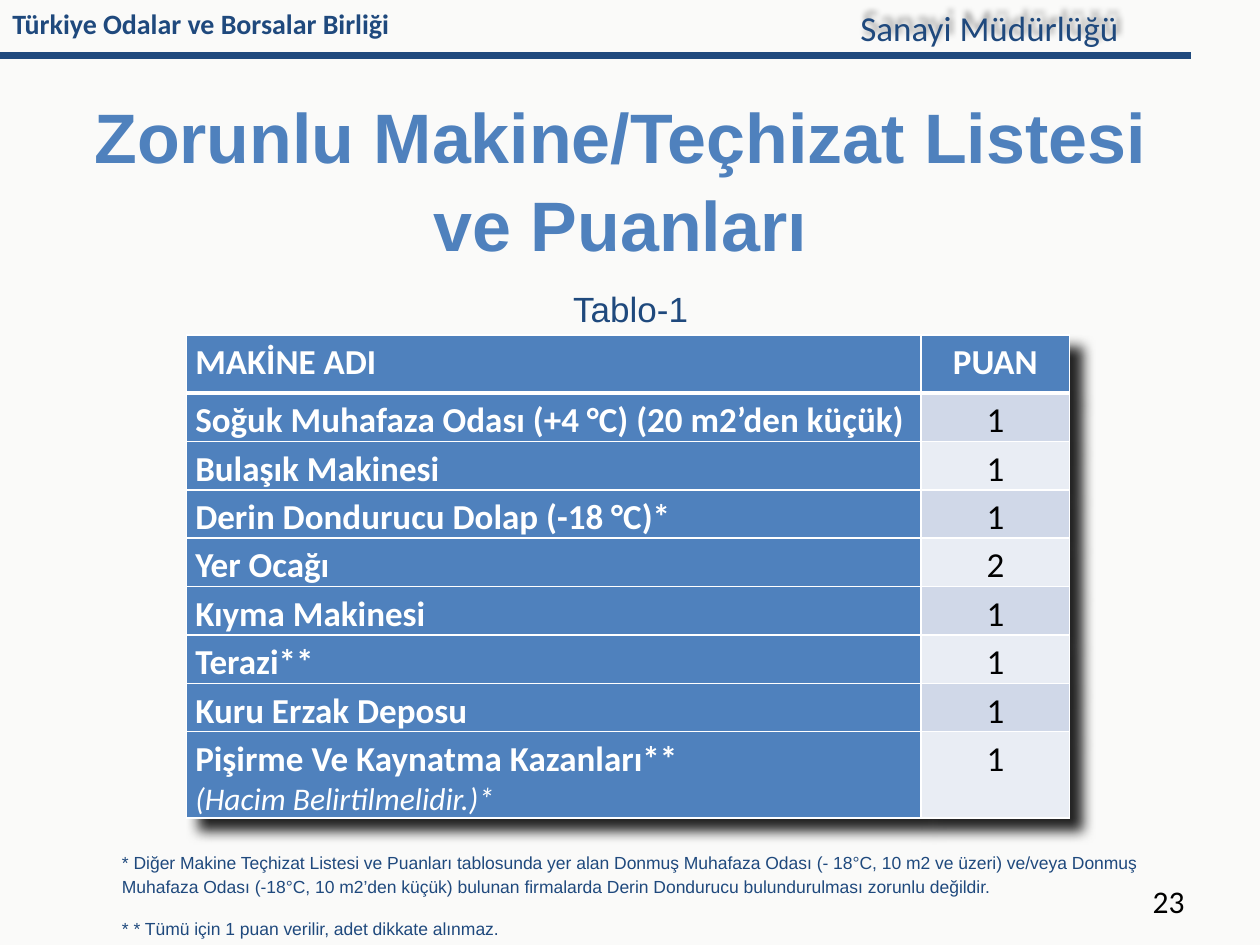
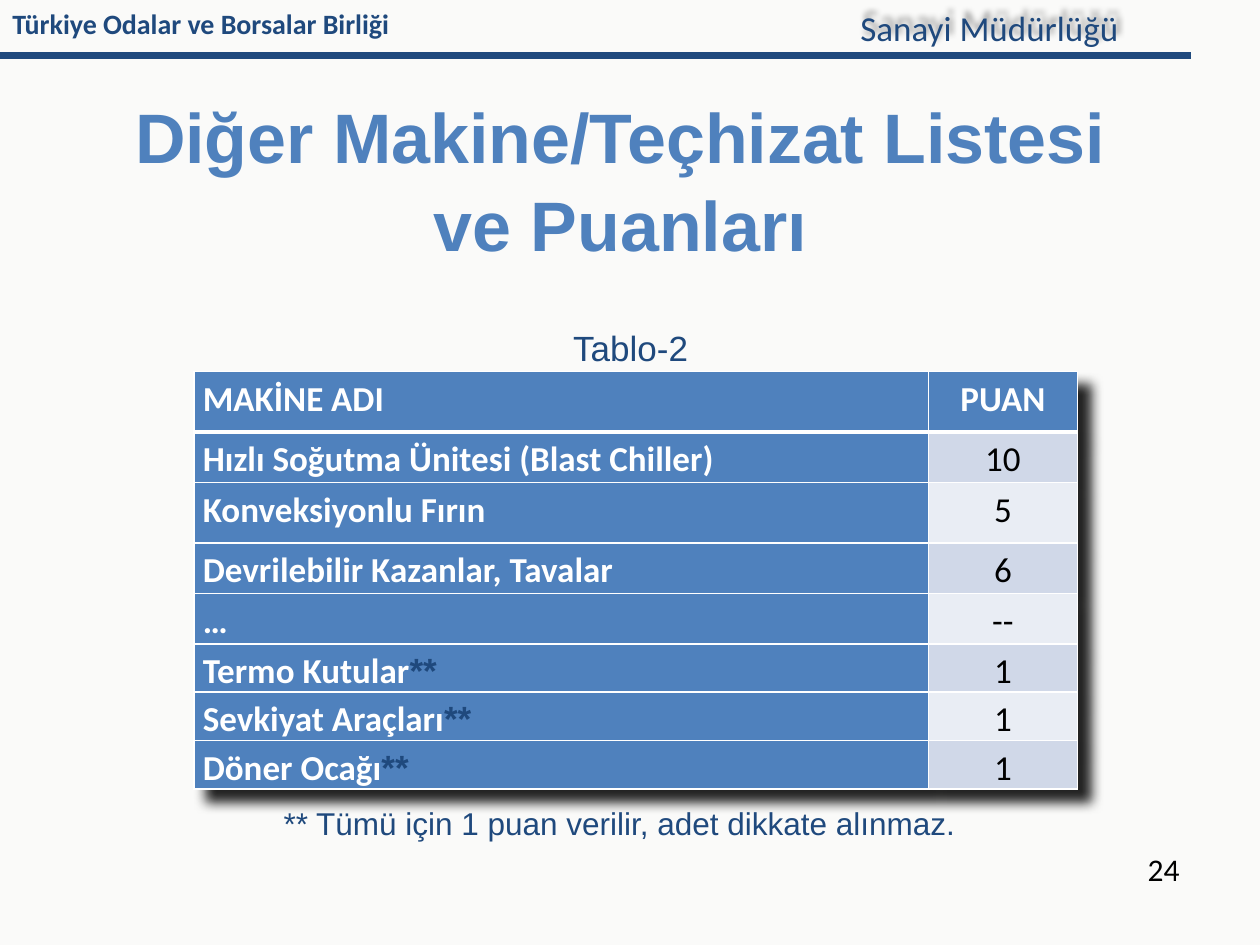
from lxml import etree
from pptx import Presentation
from pptx.dml.color import RGBColor
from pptx.enum.shapes import MSO_CONNECTOR
from pptx.enum.text import MSO_ANCHOR, PP_ALIGN
from pptx.oxml.ns import qn
from pptx.util import Inches, Pt

LEFT, CENTER, RIGHT = PP_ALIGN.LEFT, PP_ALIGN.CENTER, PP_ALIGN.RIGHT
MIDDLE, TOP = MSO_ANCHOR.MIDDLE, MSO_ANCHOR.TOP
STRAIGHT = MSO_CONNECTOR.STRAIGHT

NAVY, BLUE, WHITE, BLACK = "1F497D", "4F81BD", "FFFFFF", "000000"
BACKGROUND = "FAFAF9"
BANDS = ("D0D8E8", "E9EDF4")

UNION = dict(name="Calibri", size=16, bold=True, color=NAVY)
OFFICE = dict(name="Calibri", size=20, bold=False, color=NAVY)
TITLE = dict(name="Arial", size=40, bold=True, color=BLUE)
CAPTION = dict(name="Arial", size=20, bold=False, color=NAVY)
FOOTNOTE = dict(CAPTION, size=10)
NOTE = dict(CAPTION, size=18)
NUMBER = dict(name="Calibri", size=18, bold=False, color=BLACK)
MACHINE = dict(name="Calibri", size=20, bold=True, color=WHITE)
POINTS = dict(MACHINE, bold=False, color=BLACK)
REMARK = dict(MACHINE, size=18, bold=False, italic=True)
MARK = dict(MACHINE, name="Arial", color=NAVY)

CAPTION_SPACING = dict(line_spacing=1.15, space_after=Pt(10))
COLUMNS = (5.83, 1.18)
HEADINGS = ("MAKİNE ADI", "PUAN")

SLIDES = [
    dict(
        title=["Zorunlu Makine/Teçhizat Listesi ", "ve Puanları "],
        caption="Tablo-1", caption_top=2.18,
        table_at=(1.48, 2.66),
        heights=[0.46] + [0.38] * 7 + [0.68],
        machines=[
            ("Soğuk Muhafaza Odası (+4 °C) (20 m2’den küçük)", "1"),
            ("Bulaşık Makinesi", "1"),
            ("Derin Dondurucu Dolap (-18 °C)*", "1"),
            ("Yer Ocağı", "2"),
            ("Kıyma Makinesi", "1"),
            ("Terazi**", "1"),
            ("Kuru Erzak Deposu", "1"),
            ("Pişirme Ve Kaynatma Kazanları**", "1", "(Hacim Belirtilmelidir.)*"),
        ],
        marked=(),
        notes=[
            "* Diğer Makine Teçhizat Listesi ve Puanları tablosunda yer alan "
            "Donmuş Muhafaza Odası (- 18°C, 10 m2 ve üzeri) ve/veya Donmuş "
            "Muhafaza Odası (-18°C, 10 m2’den küçük) bulunan firmalarda Derin "
            "Dondurucu bulundurulması zorunlu değildir.",
            "* * Tümü için 1 puan verilir, adet dikkate alınmaz.",
        ],
        notes_at=(0.87, 6.69, 8.27, 0.82),
        notes_style=FOOTNOTE, notes_align=LEFT, notes_spacing=CAPTION_SPACING,
        number="23", number_at=(7.17, 6.95, 2.33, 0.4),
    ),
    dict(
        title=["Diğer Makine/Teçhizat Listesi ", "ve Puanları "],
        caption="Tablo-2", caption_top=2.49,
        table_at=(1.54, 2.95),
        heights=[0.48, 0.4, 0.48, 0.4, 0.4] + [0.37] * 3,
        machines=[
            ("Hızlı Soğutma Ünitesi (Blast Chiller)", "10"),
            ("Konveksiyonlu Fırın", "5"),
            ("Devrilebilir Kazanlar, Tavalar", "6"),
            ("…", "--"),
            ("Termo Kutular", "1"),
            ("Sevkiyat Araçları", "1"),
            ("Döner Ocağı", "1"),
        ],
        marked=("Termo Kutular", "Sevkiyat Araçları", "Döner Ocağı"),
        notes=["** Tümü için 1 puan verilir, adet dikkate alınmaz."],
        notes_at=(1.77, 6.33, 5.91, 0.4),
        notes_style=NOTE, notes_align=RIGHT, notes_spacing={},
        number="24", number_at=(8.78, 6.7, 0.68, 0.4),
    ),
]


def rgb(color):
    return RGBColor.from_string(color)


def add_span(para, text, style):
    span = para.add_run()
    span.text = text
    for key, value in style.items():
        if key == "color":
            span.font.color.rgb = rgb(value)
        else:
            setattr(span.font, key, Pt(value) if key == "size" else value)


def write(frame, paragraphs, align=LEFT, spacing=None):
    for index, spans in enumerate(paragraphs):
        para = frame.add_paragraph() if index else frame.paragraphs[0]
        para.alignment = align
        for key, value in (spacing or {}).items():
            setattr(para, key, value)
        for text, style in spans:
            add_span(para, text, style)


def add_text(page, place, lines, style, align=LEFT, spacing=None, anchor=TOP):
    box = page.shapes.add_textbox(*map(Inches, place))
    box.text_frame.word_wrap = True
    box.text_frame.vertical_anchor = anchor
    write(box.text_frame, [[(line, style)] for line in lines], align, spacing)
    return box


def make_shadow(blur, distance, degrees, opacity):
    effects = etree.Element(qn("a:effectLst"))
    shadow = etree.SubElement(
        effects, qn("a:outerShdw"), blurRad=str(Inches(blur)),
        dist=str(Inches(distance)), dir=str(degrees * 60000),
        algn="tl", rotWithShape="0")
    color = etree.SubElement(shadow, qn("a:srgbClr"), val=BLACK)
    etree.SubElement(color, qn("a:alpha"), val=str(opacity * 1000))
    return effects


def format_cell(cell, fill, bottom):
    cell.margin_left = cell.margin_right = Inches(0.07)
    cell.margin_top = cell.margin_bottom = 0
    cell.fill.solid()
    cell.fill.fore_color.rgb = rgb(fill)
    properties = cell._tc.get_or_add_tcPr()
    widths = dict(lnL=1, lnR=1, lnT=1, lnB=bottom)
    for index, (side, width) in enumerate(widths.items()):
        border = etree.Element(qn("a:" + side), w=str(Pt(width)))
        paint = etree.SubElement(border, qn("a:solidFill"))
        etree.SubElement(paint, qn("a:srgbClr"), val=WHITE)
        properties.insert(index, border)


def add_machine_table(page, content):
    heights = content["heights"]
    rows = [HEADINGS] + content["machines"]
    place = (*content["table_at"], sum(COLUMNS), sum(heights))
    table = page.shapes.add_table(len(rows), 2, *map(Inches, place)).table
    table._tbl.tblPr.insert(0, make_shadow(0.1, 0.14, 45, 85))
    for column, width in zip(table.columns, COLUMNS):
        column.width = Inches(width)
    for index, (machine, points, *remarks) in enumerate(rows):
        table.rows[index].height = Inches(heights[index])
        header = index == 0
        name_cell, points_cell = table.cell(index, 0), table.cell(index, 1)
        bottom = 3 if header else 1
        format_cell(name_cell, BLUE, bottom)
        format_cell(points_cell, BLUE if header else BANDS[(index - 1) % 2], bottom)
        name = [(machine, MACHINE)]
        if machine in content["marked"]:
            name.append(("**", MARK))
        write(name_cell.text_frame, [name] + [[(text, REMARK)] for text in remarks])
        name_cell.text_frame.paragraphs[0].line_spacing = 1.15
        write(points_cell.text_frame, [[(points, MACHINE if header else POINTS)]],
              CENTER, dict(line_spacing=1.15))


def add_header(page):
    page.background.fill.solid()
    page.background.fill.fore_color.rgb = rgb(BACKGROUND)
    ends = (0, 0.44, 9.45, 0.44)
    rule = page.shapes.add_connector(STRAIGHT, *map(Inches, ends))
    rule.line.color.rgb = rgb(NAVY)
    rule.line.width = Pt(4)
    etree.SubElement(rule._element.spPr, qn("a:effectLst"))
    add_text(page, (0, 0, 8.15, 0.37), ["Türkiye Odalar ve Borsalar Birliği"], UNION)
    office = add_text(page, (6.73, 0, 3.27, 0.44), ["Sanayi Müdürlüğü"], OFFICE)
    office._element.spPr.append(make_shadow(0.05, 0.06, 290, 40))


def add_slide(deck, content):
    page = deck.slides.add_slide(deck.slide_layouts[6])
    add_header(page)
    title = add_text(page, (0, 0.75, 10, 1.35), content["title"], TITLE, CENTER,
                     anchor=MIDDLE)
    title.text_frame.paragraphs[1].space_before = Pt(2)
    add_machine_table(page, content)
    add_text(page, (1.46, content["caption_top"], 7.09, 0.46),
             [content["caption"]], CAPTION, CENTER, CAPTION_SPACING)
    add_text(page, content["notes_at"], content["notes"], content["notes_style"],
             content["notes_align"], content["notes_spacing"])
    add_text(page, content["number_at"], [content["number"]], NUMBER, RIGHT)


def main():
    deck = Presentation()
    deck.slide_width, deck.slide_height = Inches(10), Inches(7.5)
    for content in SLIDES:
        add_slide(deck, content)
    deck.save("out.pptx")


if __name__ == "__main__":
    main()
